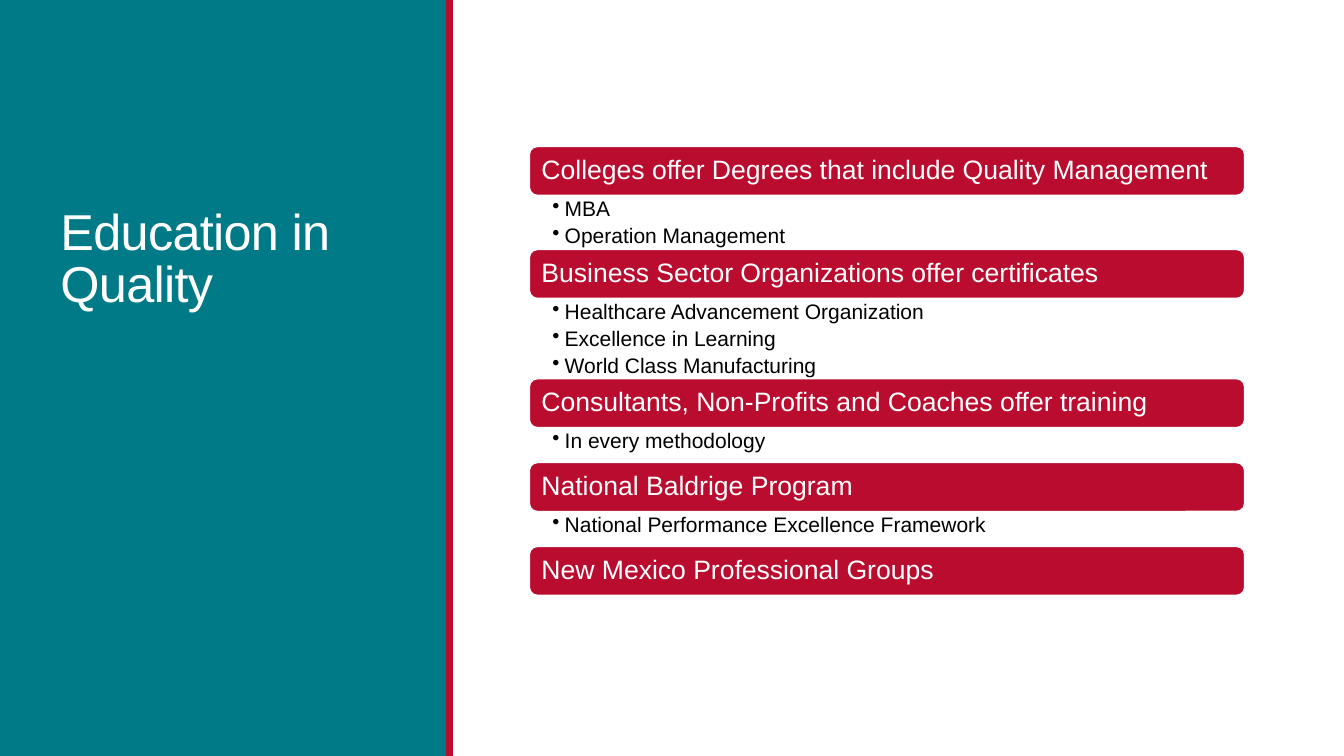
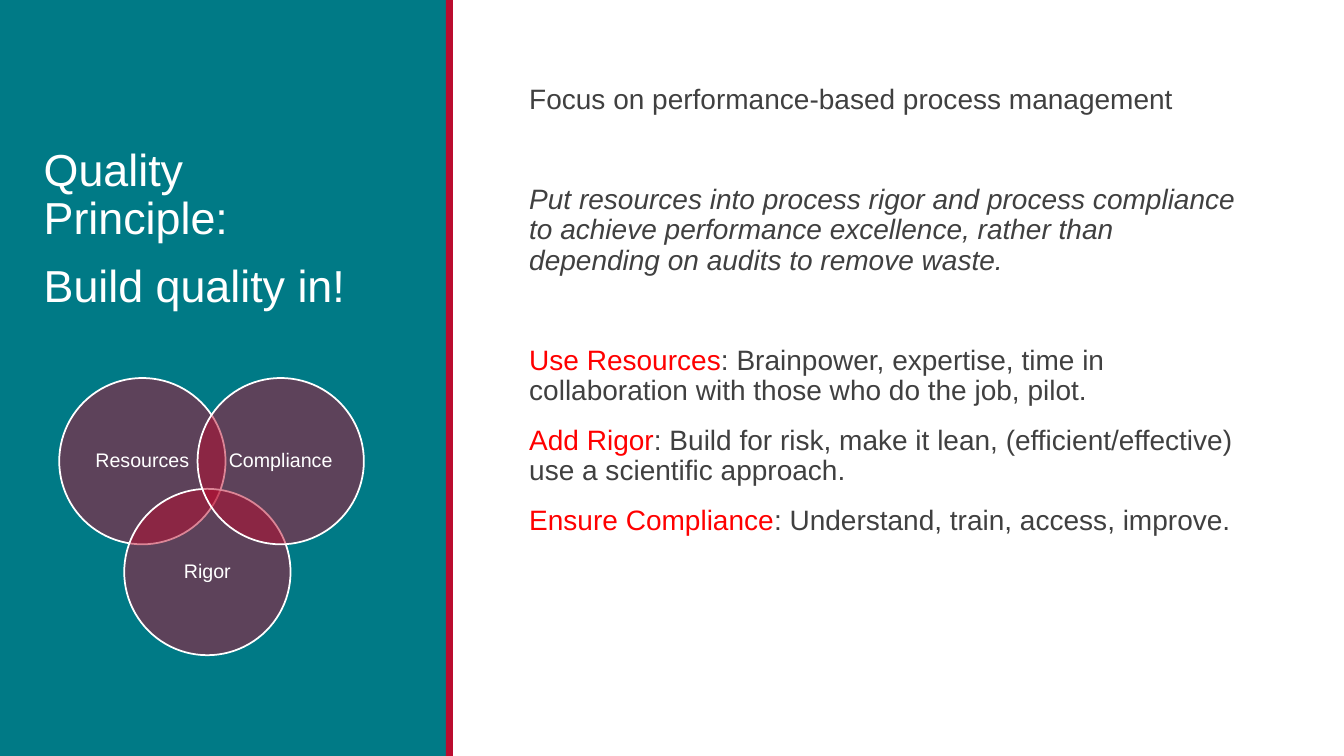
from dataclasses import dataclass

from lxml import etree
from pptx import Presentation
from pptx import util as u
from pptx.dml import color
from pptx.enum import shapes, text
from pptx.oxml import ns

Pt = u.Pt


@dataclass(frozen=True)
class Theme:
    """Colours, font and type sizes of the deck."""
    teal: str = "007A86"
    red: str = "BA0C2F"
    alert: str = "FF0000"
    white: str = "FFFFFF"
    black: str = "000000"
    gray: str = "404040"
    font: str = "Arial"
    title: int = 36
    lead: int = 32
    body: int = 20
    bar: int = 19
    item: int = 15
    label: int = 14


T = Theme()
WIDE, HIGH = 960, 540
SIDE = (0, 0, 319, HIGH)
MAIN = (378, 57.6, 511.2, 414)

TOPICS = [
    ("Colleges offer Degrees that include Quality Management", 38.4,
     ["MBA", "Operation Management"]),
    ("Business Sector Organizations offer certificates", 57.1,
     ["Healthcare Advancement Organization", "Excellence in Learning",
      "World Class Manufacturing"]),
    ("Consultants, Non-Profits and Coaches offer training", 24.7,
     ["In every methodology"]),
    ("National Baldrige Program", 24.7,
     ["National Performance Excellence Framework"]),
    ("New Mexico Professional Groups", 0, []),
]
ADVICE = [
    ("Use Resources", ": Brainpower, expertise, time in collaboration with "
     "those who do the job, pilot."),
    ("Add Rigor", ": Build for risk, make it lean, (efficient/effective) "
     "use a scientific approach."),
    ("Ensure Compliance", ": Understand, train, access, improve."),
]


def sub(node, tag, **attrs):
    """Append a drawing element to an XML node."""
    return etree.SubElement(node, ns.qn(tag), **attrs)


def place(shape, box):
    """Move a shape to a box given in points."""
    shape.left, shape.top, shape.width, shape.height = map(Pt, box)
    return shape


def frame(shape, pad=(7.2, 3.6, 7.2, 3.6), anchor=text.MSO_ANCHOR.TOP):
    """Set up the text frame of a shape."""
    area = shape.text_frame
    area.word_wrap = True
    area.auto_size = text.MSO_AUTO_SIZE.NONE
    area.vertical_anchor = anchor
    sides = ("left", "top", "right", "bottom")
    for side, gap in zip(sides, pad):
        setattr(area, f"margin_{side}", Pt(gap))
    return area


def write(area, *parts, size, color_=T.white, first=False, italic=False,
          align=text.PP_ALIGN.LEFT, line=0.9, before=0, after=0,
          bullet=None, indent=0, track=0):
    """Write one paragraph of strings or (string, colour) pairs."""
    para = area.paragraphs[0] if first else area.add_paragraph()
    props = para._p.get_or_add_pPr()
    props.set("marL", str(Pt(indent)))
    props.set("indent", str(-Pt(indent)))
    if bullet:
        sub(props, "a:buChar", char=bullet)
    else:
        sub(props, "a:buNone")
    para.alignment, para.line_spacing = align, line
    para.space_before, para.space_after = Pt(before), Pt(after)
    for part in parts:
        words, tint = (part, color_) if isinstance(part, str) else part
        run = para.add_run()
        run.text = words
        font = run.font
        font.name, font.size, font.italic = T.font, Pt(size), italic
        font.color.rgb = color.RGBColor.from_string(tint)
        if track:
            run._r.get_or_add_rPr().set("spc", str(int(track * 100)))


def draw(slide, kind, box, fill, edge=None, alpha=None):
    """Add a filled preset shape."""
    shape = slide.shapes.add_shape(kind, *map(Pt, box))
    shape.shadow.inherit = False
    shape.fill.solid()
    shape.fill.fore_color.rgb = color.RGBColor.from_string(fill)
    if alpha:
        tint = shape.element.spPr.find(".//" + ns.qn("a:srgbClr"))
        sub(tint, "a:alpha", val=str(alpha * 1000))
    if edge:
        shape.line.color.rgb = color.RGBColor.from_string(edge)
        shape.line.width = Pt(1.25)
    else:
        shape.line.fill.background()
    return shape


def panel(deck, slide, box):
    """Put the side panel and its red edge on the slide master."""
    x, y, w, h = box
    tree = deck.slide_master.shapes.element
    rect = shapes.MSO_SHAPE.RECTANGLE
    edge = draw(slide, rect, (x + w - 0.5, y, 5, h), T.red)
    side = draw(slide, rect, box, T.teal)
    for shape in (edge, side):
        tree.insert(2, shape.element)


def bars(slide, box, tall=35.2):
    """Stack heading bars, each followed by its bullet list."""
    x, y, w, _ = box
    for head, room, items in TOPICS:
        bar = draw(slide, shapes.MSO_SHAPE.ROUNDED_RECTANGLE,
                   (x, y, w, tall), T.red, T.white)
        write(frame(bar, anchor=text.MSO_ANCHOR.MIDDLE), head,
              size=T.bar, first=True)
        y += tall
        if items:
            note = slide.shapes.add_textbox(*map(Pt, (x, y, w, room)))
            area = frame(note, (16.6, 2, 10.8, 2))
            for i, item in enumerate(items):
                write(area, item, size=T.item, color_=T.black, first=i == 0,
                      after=3, bullet="•", indent=8.8)
        y += room


def venn(slide, box, size=118.8):
    """Draw three overlapping circles that fill the box."""
    x, y, w, h = box
    right, low = w - size, h - size
    spots = [("Resources", 0, 0), ("Rigor", right * 0.47, low),
             ("Compliance", right, 0)]
    for name, dx, dy in spots:
        disk = draw(slide, shapes.MSO_SHAPE.OVAL,
                    (x + dx, y + dy, size, size), T.red, T.white, 50)
        write(frame(disk, (4, 4, 4, 4), text.MSO_ANCHOR.MIDDLE), name,
              size=T.label, first=True, align=text.PP_ALIGN.CENTER)


def advice(shape, box):
    """Fill the body with the principle and its three rules."""
    area = frame(place(shape, box), (0, 3.6, 0, 3.6))
    look = dict(size=T.body, color_=T.gray, after=2)
    write(area, "Focus on performance-based process management",
          first=True, **look)
    write(area, "Put resources into process rigor and process compliance "
          "to achieve performance excellence, rather than depending on "
          "audits to remove waste.", italic=True, before=47.7, **look)
    for i, (key, rest) in enumerate(ADVICE):
        write(area, (key, T.alert), rest, before=12 if i else 47.7, **look)


def study(deck):
    """Build the slide on education."""
    slide = deck.slides.add_slide(deck.slide_layouts[5])
    panel(deck, slide, SIDE)
    x, y, _, _ = SIDE
    head = place(slide.shapes.title, (x + 36, y + 46.8, 252, 180))
    write(frame(head, anchor=text.MSO_ANCHOR.BOTTOM), "Education in Quality",
          size=T.title, first=True, line=0.85, track=-0.5)
    x, y, w, h = MAIN
    bars(slide, (x, y + 46.9, w, h))


def creed(deck):
    """Build the slide on the quality principle."""
    slide = deck.slides.add_slide(deck.slide_layouts[1])
    x, y, _, _ = SIDE
    area = frame(place(slide.shapes.title, (x + 24, y + 102, 252, 160)))
    write(area, "Quality Principle:", size=T.lead, first=True, after=2)
    write(area, "Build quality in!", size=T.lead, before=12, after=2)
    advice(slide.placeholders[1], MAIN)
    venn(slide, (x + 42.3, y + 270, 217.6, 198))


def main():
    """Build and save the deck."""
    deck = Presentation()
    deck.slide_width, deck.slide_height = Pt(WIDE), Pt(HIGH)
    study(deck)
    creed(deck)
    deck.save("out.pptx")


if __name__ == "__main__":
    main()
